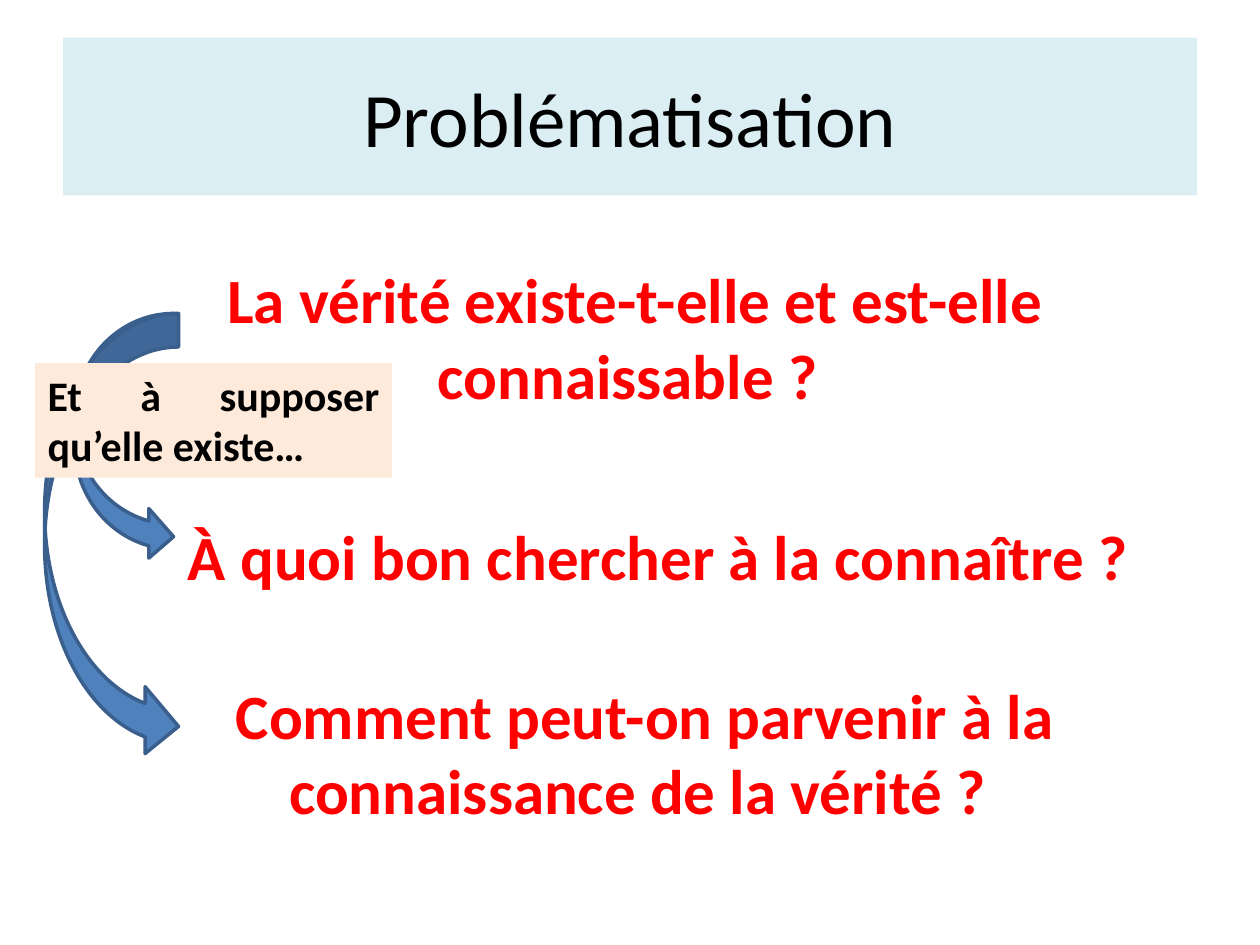
from pptx import Presentation
from pptx.dml.color import RGBColor
from pptx.enum.shapes import MSO_SHAPE
from pptx.enum.text import MSO_ANCHOR, MSO_AUTO_SIZE, PP_ALIGN
from pptx.util import Cm, Pt

CENTER, JUSTIFY = PP_ALIGN.CENTER, PP_ALIGN.JUSTIFY
MIDDLE = MSO_ANCHOR.MIDDLE
GROW = MSO_AUTO_SIZE.SHAPE_TO_FIT_TEXT
CURVED_ARROW = MSO_SHAPE.CURVED_RIGHT_ARROW

COLORS = {
    "title_band": "DBEEF4",
    "question": "FF0000",
    "text": "000000",
    "arrow": "4F81BD",
    "arrow_line": "3A5F8C",
    "note": "FDEADA",
}


class SlideBuilder:
    font_name = "Calibri"

    def __init__(self, slide):
        self.slide = slide

    def color(self, name):
        return RGBColor.from_string(COLORS[name])

    def fill(self, shape, name):
        shape.fill.solid()
        shape.fill.fore_color.rgb = self.color(name)

    def set_text(self, shape, text, size, color, bold, alignment):
        paragraph = shape.text_frame.paragraphs[0]
        paragraph.alignment = alignment
        run = paragraph.add_run()
        run.text = text
        formats = {"name": self.font_name, "size": Pt(size), "bold": bold}
        for attribute, value in formats.items():
            setattr(run.font, attribute, value)
        run.font.color.rgb = self.color(color)

    def title(self, text, left, top, width, height):
        shape = self.slide.shapes.title
        places = {"left": left, "top": top, "width": width, "height": height}
        for attribute, value in places.items():
            setattr(shape, attribute, Cm(value))
        self.fill(shape, "title_band")
        shape.text_frame.vertical_anchor = MIDDLE
        self.set_text(shape, text, 44, "text", False, CENTER)

    def text_box(self, text, place, size, color, alignment):
        shape = self.slide.shapes.add_textbox(*map(Cm, place))
        formats = {"word_wrap": True, "auto_size": GROW}
        for attribute, value in formats.items():
            setattr(shape.text_frame, attribute, value)
        self.set_text(shape, text, size, color, True, alignment)
        return shape

    def question(self, text, *place):
        self.text_box(text, place, 36, "question", CENTER)

    def note(self, text, *place):
        self.fill(self.text_box(text, place, 24, "text", JUSTIFY), "note")

    def curved_arrow(self, *place):
        shape = self.slide.shapes.add_shape(CURVED_ARROW, *map(Cm, place))
        shape.shadow.inherit = False
        self.fill(shape, "arrow")
        shape.line.color.rgb = self.color("arrow_line")
        shape.line.width = Pt(2)


def main():
    presentation = Presentation()
    presentation.slide_width = Cm(25.4)
    presentation.slide_height = Cm(19.05)
    title_only = presentation.slide_layouts[5]
    builder = SlideBuilder(presentation.slides.add_slide(title_only))

    builder.title("Problématisation", 1.27, 0.76, 22.86, 3.18)
    builder.question("La vérité existe-t-elle et est-elle connaissable ? ", 1.9, 5.13, 21.8, 3.33)
    builder.question("À quoi bon chercher à la connaître ? ", 2.31, 10.31, 22.2, 1.8)
    builder.question("Comment peut-on parvenir à la connaissance de la vérité ? ", 3.5, 13.51, 19, 3.33)
    builder.curved_arrow(1.5, 6.32, 2, 5)
    builder.curved_arrow(0.9, 6.32, 2.7, 9)
    builder.note("Et à supposer qu’elle existe… ", 0.71, 7.32, 7.19, 2.31)

    presentation.save("out.pptx")


if __name__ == "__main__":
    main()
